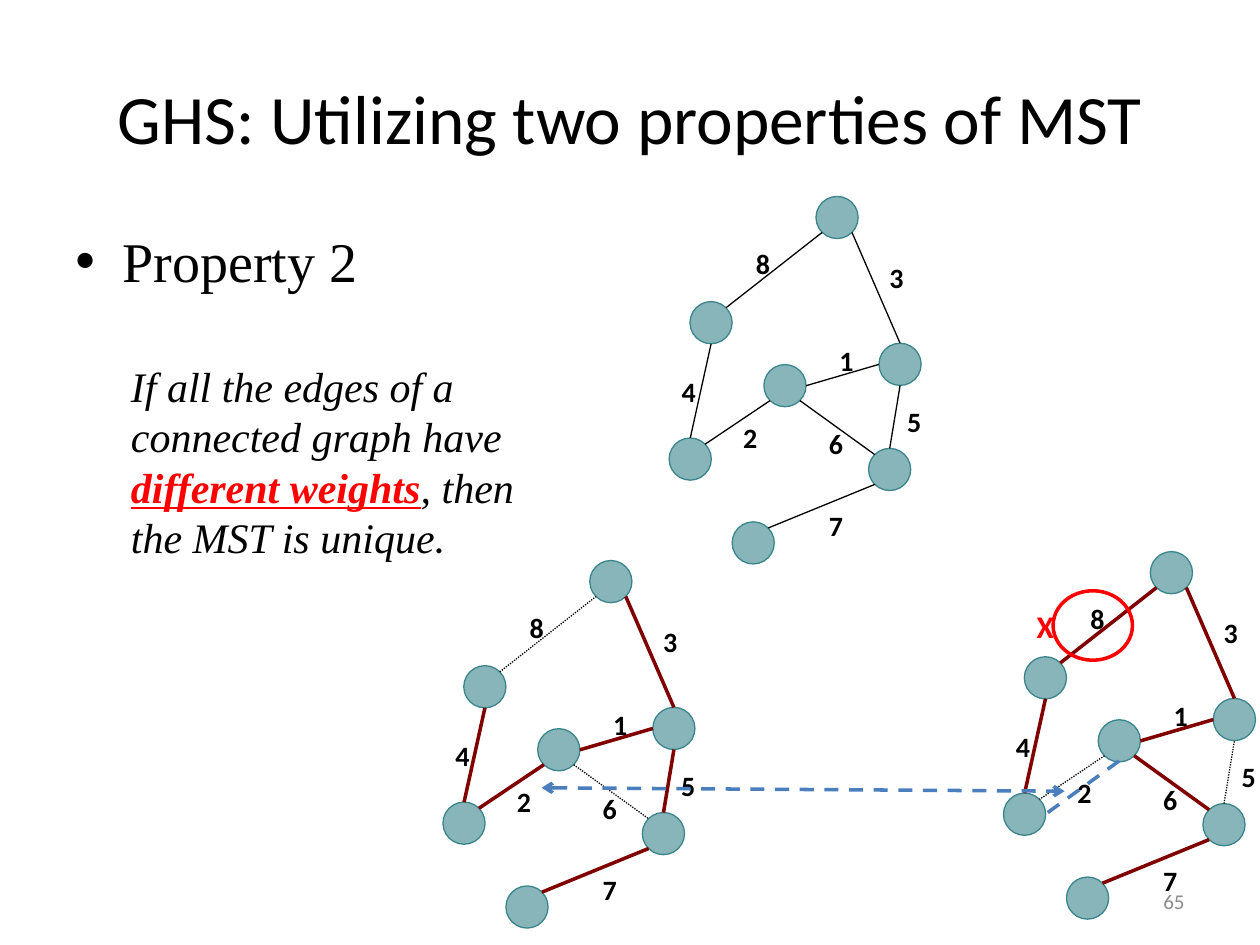
from dataclasses import dataclass
from math import sqrt

from pptx import Presentation
from pptx.dml.color import RGBColor
from pptx.enum.dml import MSO_LINE
from pptx.enum.shapes import MSO_CONNECTOR, MSO_SHAPE
from pptx.enum.text import MSO_ANCHOR, PP_ALIGN
from pptx.oxml.ns import qn
from pptx.util import Cm, Pt
from lxml.etree import SubElement

BLACK = RGBColor(0x00, 0x00, 0x00)
RED = RGBColor(0xFF, 0x00, 0x00)
MAROON = RGBColor(0x80, 0x00, 0x00)
TEAL = RGBColor(0x39, 0x85, 0x8B)
BLUE = RGBColor(0x4B, 0x7E, 0xBC)
GRAY = RGBColor(0x8C, 0x8C, 0x8C)
SANS, SERIF = "Calibri", "Times New Roman"

DIAMETER = 0.85
DIAGONAL = 1 / sqrt(2)

# Directions from a node's centre to its rim, in radii
TOP, BOTTOM, LEFT, RIGHT = (0, -1), (0, 1), (-1, 0), (1, 0)
TOP_LEFT, TOP_RIGHT = (-DIAGONAL, -DIAGONAL), (DIAGONAL, -DIAGONAL)
BOTTOM_LEFT, BOTTOM_RIGHT = (-DIAGONAL, DIAGONAL), (DIAGONAL, DIAGONAL)


@dataclass(frozen=True)
class Edge:
    weight: int
    start: str
    start_side: tuple
    end: str
    end_side: tuple
    label: tuple  # left, top of the weight label


@dataclass(frozen=True)
class Graph:
    left: float
    top: float
    tree: frozenset = frozenset()  # weights of the edges in the spanning tree


# Node corners and label corners in cm, relative to the graph
NODES = {
    "hub": (1.91, 3.39),
    "top": (2.96, 0),
    "lower right": (4.02, 5.08),
    "right": (4.23, 2.96),
    "bottom": (1.27, 6.56),
    "left": (0.42, 2.12),
    "lower left": (0, 4.87),
}
EDGES = [
    Edge(8, "left", TOP_RIGHT, "top", BOTTOM_LEFT, (1.5, 0.81)),
    Edge(1, "hub", RIGHT, "right", LEFT, (3.18, 2.77)),
    Edge(3, "right", TOP, "top", BOTTOM_RIGHT, (4.19, 1.09)),
    Edge(2, "hub", BOTTOM_LEFT, "lower left", TOP_RIGHT, (1.24, 4.32)),
    Edge(6, "hub", BOTTOM_RIGHT, "lower right", TOP_LEFT, (2.97, 4.45)),
    Edge(5, "lower right", TOP, "right", BOTTOM, (4.55, 3.99)),
    Edge(7, "lower right", BOTTOM_LEFT, "bottom", TOP_RIGHT, (2.97, 6.1)),
    Edge(4, "lower left", TOP, "left", BOTTOM, (0, 3.4)),
]
GRAPHS = [
    Graph(13.49, 3.96),
    Graph(8.93, 11.3, frozenset({1, 2, 3, 4, 5, 7})),
    Graph(20.23, 11.12, frozenset({1, 3, 4, 6, 7, 8})),
]


def add_text(shapes, box: tuple, text: str, size: float, name: str = SANS,
             color: RGBColor = BLACK, bold: bool = False, wrap: bool = True,
             align=PP_ALIGN.LEFT, anchor=MSO_ANCHOR.TOP):
    """Add a one-paragraph text box and return the paragraph."""
    frame = shapes.add_textbox(*map(Cm, box)).text_frame
    frame.word_wrap = wrap
    frame.vertical_anchor = anchor
    paragraph = frame.paragraphs[0]
    paragraph.text = text
    paragraph.alignment = align
    font = paragraph.font
    font.name, font.size, font.bold = name, Pt(size), bold
    font.color.rgb = color
    return paragraph


def add_line(shapes, start: tuple, end: tuple, color: RGBColor, width: float,
             dash=None, arrows: bool = False) -> None:
    connector = shapes.add_connector(MSO_CONNECTOR.STRAIGHT, *map(Cm, start + end))
    line = connector.line
    line.color.rgb = color
    line.width = Pt(width)
    if dash is not None:
        line.dash_style = dash
    if arrows:
        for tag in ("a:headEnd", "a:tailEnd"):
            SubElement(line._get_or_add_ln(), qn(tag), type="arrow")
    SubElement(connector._element.spPr, qn("a:effectLst"))


def add_circle(shapes, box: tuple, color: RGBColor, width: float, filled: bool) -> None:
    circle = shapes.add_shape(MSO_SHAPE.OVAL, *map(Cm, box))
    circle.shadow.inherit = False
    circle.line.color.rgb = color
    circle.line.width = Pt(width)
    if filled:
        circle.fill.solid()
        circle.fill.fore_color.rgb = color
        color_element = circle._element.spPr.find(qn("a:solidFill"))[0]
        SubElement(color_element, qn("a:alpha"), val="60000")
    else:
        circle.fill.background()


def add_graph(slide, graph: Graph) -> None:
    shapes = slide.shapes.add_group_shape().shapes

    def rim(node: str, side: tuple) -> tuple:
        left, top = NODES[node]
        radius = DIAMETER / 2
        return (graph.left + left + radius * (1 + side[0]),
                graph.top + top + radius * (1 + side[1]))

    for left, top in NODES.values():
        add_circle(shapes, (graph.left + left, graph.top + top, DIAMETER, DIAMETER),
                   TEAL, 0.75, filled=True)
    for edge in EDGES:
        if edge.weight in graph.tree:
            style = (MAROON, 2)
        elif graph.tree:
            style = (BLACK, 0.75, MSO_LINE.ROUND_DOT)
        else:
            style = (BLACK, 0.75)
        add_line(shapes, rim(edge.start, edge.start_side),
                 rim(edge.end, edge.end_side), *style)
    for edge in EDGES:
        left, top = edge.label
        add_text(shapes, (graph.left + left, graph.top + top, 0.64, 1.07),
                 str(edge.weight), 16, bold=True, wrap=False,
                 align=PP_ALIGN.CENTER, anchor=MSO_ANCHOR.MIDDLE)


def main() -> None:
    presentation = Presentation()
    presentation.slide_width, presentation.slide_height = Cm(25.4), Cm(19.05)
    slide = presentation.slides.add_slide(presentation.slide_layouts[5])
    shapes = slide.shapes

    # Title
    title = shapes.title
    title.left, title.top, title.width, title.height = map(Cm, (1.27, 0.76, 22.86, 3.18))
    title.text_frame.text = "GHS: Utilizing two properties of MST"
    title.text_frame.vertical_anchor = MSO_ANCHOR.MIDDLE
    heading = title.text_frame.paragraphs[0]
    heading.alignment = PP_ALIGN.CENTER
    heading.font.name, heading.font.size = SANS, Pt(39.6)
    heading.font.color.rgb = BLACK

    # Property bullet and its statement
    bullet = add_text(shapes, (1.27, 4.45, 22.86, 12.57), "Property 2", 32, SERIF)
    bullet.space_before = Pt(6.4)
    properties = bullet._p.get_or_add_pPr()
    properties.set("marL", str(Cm(0.95)))
    properties.set("indent", str(Cm(-0.95)))
    SubElement(properties, qn("a:buFont"), typeface="Arial")
    SubElement(properties, qn("a:buChar"), char="•")

    statement = add_text(shapes, (2.39, 7.14, 8.43, 5.38),
                         "If all the edges of a connected graph have ", 24, SERIF)
    statement.font.italic = True
    emphasis = statement.add_run()
    emphasis.text = "different weights"
    emphasis.font.bold = emphasis.font.underline = True
    emphasis.font.color.rgb = RED
    statement.add_run().text = ", then the MST is unique"
    period = statement.add_run()
    period.text = "."
    period.font.name = SANS

    # Weighted graph and two candidate trees
    for graph in GRAPHS:
        add_graph(slide, graph)

    # Comparison of the trees and the rejected edge
    add_line(shapes, (10.92, 15.88), (21.46, 15.95), BLUE, 2, MSO_LINE.DASH, arrows=True)
    add_line(shapes, (22.56, 15.34), (21.08, 16.41), BLUE, 2, MSO_LINE.DASH)
    add_circle(shapes, (21.23, 11.91, 1.6, 1.4), RED, 2, filled=False)
    add_text(shapes, (20.65, 12.12, 3.18, 1.02), "X", 18, color=RED, bold=True)

    # Slide number
    add_text(shapes, (18.21, 17.65, 5.92, 1.02), "65", 12, color=GRAY,
             align=PP_ALIGN.RIGHT, anchor=MSO_ANCHOR.MIDDLE)

    presentation.save("out.pptx")


if __name__ == "__main__":
    main()
